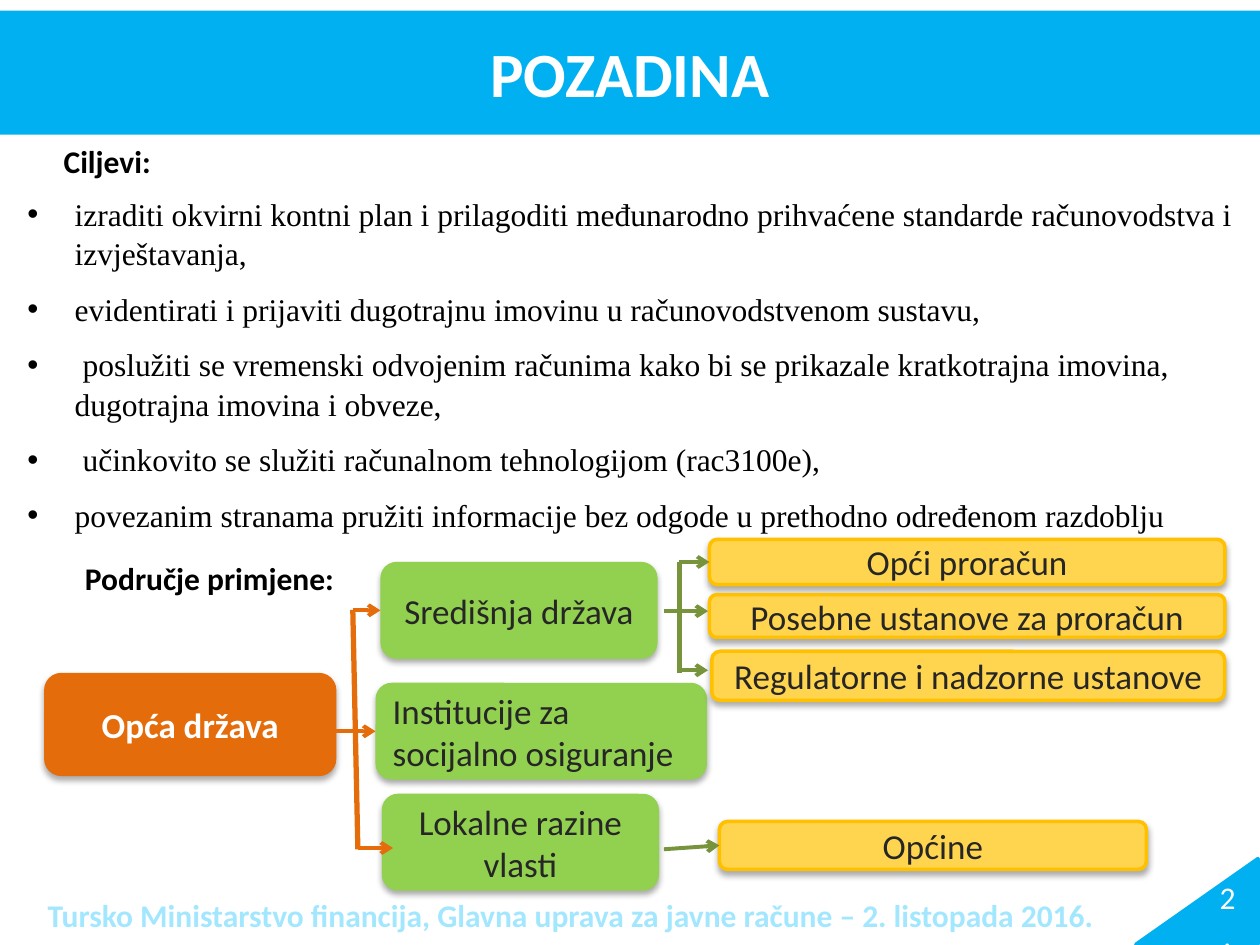
"""Build the POZADINA slide: goals and scope of general government accounting."""
from lxml import etree
from pptx import Presentation
from pptx.dml.color import RGBColor
from pptx.enum.shapes import MSO_CONNECTOR, MSO_SHAPE
from pptx.enum.text import MSO_ANCHOR, MSO_AUTO_SIZE, PP_ALIGN
from pptx.oxml.ns import qn
from pptx.util import Pt

STRAIGHT = MSO_CONNECTOR.STRAIGHT
ROUNDED, TRIANGLE = MSO_SHAPE.ROUNDED_RECTANGLE, MSO_SHAPE.RIGHT_TRIANGLE
LEFT, CENTER = PP_ALIGN.LEFT, PP_ALIGN.CENTER
TOP, MIDDLE = MSO_ANCHOR.TOP, MSO_ANCHOR.MIDDLE
NO_AUTOSIZE = MSO_AUTO_SIZE.NONE
LEFT_SIDE = 1

BLACK = RGBColor(0x00, 0x00, 0x00)
WHITE = RGBColor(0xFF, 0xFF, 0xFF)
CHARCOAL = RGBColor(0x26, 0x26, 0x26)
BLUE = RGBColor(0x00, 0xB0, 0xF0)
PALE_BLUE = RGBColor(0xA3, 0xE7, 0xFF)
ORANGE = RGBColor(0xE4, 0x6C, 0x0A)
GREEN = RGBColor(0x92, 0xD0, 0x50)
OLIVE = RGBColor(0x77, 0x93, 0x3C)
YELLOW = RGBColor(0xFF, 0xD5, 0x4F)
GOLD = RGBColor(0xFF, 0xC0, 0x00)


def write(frame, *lines, size=18, color=BLACK, bold=False, font="Calibri",
          align=LEFT, anchor=TOP, bullet=None):
    frame.word_wrap = True
    frame.auto_size = NO_AUTOSIZE
    frame.vertical_anchor = anchor
    for index, line in enumerate(lines):
        paragraph = frame.add_paragraph() if index else frame.paragraphs[0]
        paragraph.alignment = align
        if index:
            paragraph.space_before = Pt(9)
        if bullet:
            paragraph.line_spacing = 1.05
            properties = paragraph._p.get_or_add_pPr()
            properties.set("marL", str(Pt(27)))
            properties.set("indent", str(Pt(-27)))
            etree.SubElement(properties, qn("a:buFont"), typeface="Arial")
            etree.SubElement(properties, qn("a:buChar"), char=bullet)
        run = paragraph.add_run()
        run.text = line
        run.font.name = font
        run.font.size = Pt(size)
        run.font.bold = bold
        run.font.color.rgb = color


def add_soft_shadow(shape):
    shape.shadow.inherit = False
    effects = shape._element.spPr.find(qn("a:effectLst"))
    shadow = etree.SubElement(effects, qn("a:outerShdw"), blurRad=str(Pt(3.5)),
                              dist=str(Pt(2.2)), dir="5400000", rotWithShape="0")
    tint = etree.SubElement(shadow, qn("a:srgbClr"), val="000000")
    etree.SubElement(tint, qn("a:alpha"), val="32000")


presentation = Presentation()
presentation.slide_width, presentation.slide_height = Pt(720), Pt(540)
slide = presentation.slides.add_slide(presentation.slide_layouts[5])
shapes = slide.shapes

title = shapes.title
title.left, title.top, title.width, title.height = Pt(0), Pt(6), Pt(720), Pt(71)
title.fill.solid()
title.fill.fore_color.rgb = BLUE
write(title.text_frame, "POZADINA", size=36, color=WHITE, bold=True,
      align=CENTER, anchor=MIDDLE)

goals = shapes.add_textbox(Pt(8.6), Pt(106.6), Pt(711.4), Pt(173))
write(goals.text_frame,
      "izraditi okvirni kontni plan i prilagoditi međunarodno prihvaćene standarde računovodstva i izvještavanja,",
      "evidentirati i prijaviti dugotrajnu imovinu u računovodstvenom sustavu,",
      " poslužiti se vremenski odvojenim računima kako bi se prikazale kratkotrajna imovina, dugotrajna imovina i obveze,",
      " učinkovito se služiti računalnom tehnologijom (rac3100e),",
      "povezanim stranama pružiti informacije bez odgode u prethodno određenom razdoblju",
      font="Times New Roman", bullet="•")

for label, left, top, width, color in (
    (" Ciljevi:", 25.2, 77.8, 311, BLACK),
    (" Područje primjene:", 37.4, 316.1, 311, BLACK),
    ("Tursko Ministarstvo financija, Glavna uprava za javne račune – 2. listopada 2016.",
     20.2, 508.3, 657.4, PALE_BLUE),
):
    caption = shapes.add_textbox(Pt(left), Pt(top), Pt(width), Pt(29))
    write(caption.text_frame, label, color=color, bold=True)

units = {}
for unit, left, top, width, height, fill, border, align in (
    ("Opća država", 25.2, 384.5, 167, 59, ORANGE, None, CENTER),
    ("Središnja država", 217.4, 321.1, 158.4, 55.4, GREEN, None, CENTER),
    ("Institucije za socijalno osiguranje", 214.6, 390.2, 189.4, 55.4, GREEN, None, LEFT),
    ("Lokalne razine vlasti", 218.2, 453.6, 158.4, 55.4, GREEN, None, CENTER),
    ("Opći proračun", 405.4, 308.2, 294.5, 25.9, YELLOW, GOLD, CENTER),
    ("Posebne ustanove za proračun", 405.4, 339.8, 294.5, 24.5, YELLOW, GOLD, CENTER),
    ("Regulatorne i nadzorne ustanove", 406.8, 372.2, 293, 28, YELLOW, GOLD, CENTER),
    ("Općine", 411.1, 469.4, 244, 27.4, YELLOW, GOLD, CENTER),
):
    box = shapes.add_shape(ROUNDED, Pt(left), Pt(top), Pt(width), Pt(height))
    box.fill.solid()
    box.fill.fore_color.rgb = fill
    if border:
        box.line.color.rgb = border
        box.line.width = Pt(2)
    else:
        box.line.fill.background()
    add_soft_shadow(box)
    box.text_frame.margin_top = box.text_frame.margin_bottom = Pt(0)
    is_root = fill == ORANGE
    write(box.text_frame, unit, size=20, color=WHITE if is_root else CHARCOAL,
          bold=is_root, align=align, anchor=MIDDLE)
    units[unit] = box

page_corner = shapes.add_shape(TRIANGLE, Pt(659.5), Pt(480.2), Pt(49), Pt(69.8))
page_corner.rotation = 270
page_corner.shadow.inherit = False
page_corner.fill.solid()
page_corner.fill.fore_color.rgb = BLUE
page_corner.line.color.rgb = BLUE
page_corner.line.width = Pt(2)
write(page_corner.text_frame, "2.", color=WHITE, align=CENTER, anchor=MIDDLE)
page_corner.text_frame._txBody.bodyPr.set("vert", "vert")

for start_x, start_y, end_x, end_y, color, weight, arrow, target in (
    (201.6, 348.5, 204.5, 485.3, ORANGE, 3, False, None),
    (192.2, 417.6, 201.6, 417.6, ORANGE, 2.25, False, None),
    (201.6, 348.8, 217.4, 348.8, ORANGE, 2.25, True, "Središnja država"),
    (201.6, 417.9, 214.6, 417.9, ORANGE, 2.25, True, "Institucije za socijalno osiguranje"),
    (204.5, 484.6, 224.6, 484.6, ORANGE, 2.25, True, None),
    (388.1, 321.1, 388.1, 384.5, OLIVE, 3, False, None),
    (379.4, 349.2, 388.1, 349.2, OLIVE, 2.25, False, None),
    (388.1, 321.15, 405.4, 321.15, OLIVE, 2.25, True, "Opći proračun"),
    (388.1, 349.2, 404.6, 349.2, OLIVE, 2.25, True, None),
    (388.1, 383, 404.6, 383, OLIVE, 2.25, True, None),
    (379.4, 485.3, 411.1, 483.1, OLIVE, 2.25, True, "Općine"),
):
    branch = shapes.add_connector(STRAIGHT, Pt(start_x), Pt(start_y), Pt(end_x), Pt(end_y))
    if target:
        branch.end_connect(units[target], LEFT_SIDE)
    branch.line.color.rgb = color
    branch.line.width = Pt(weight)
    if arrow:
        etree.SubElement(branch.line._get_or_add_ln(), qn("a:tailEnd"), type="arrow")
    etree.SubElement(branch._element.spPr, qn("a:effectLst"))

presentation.save("out.pptx")
